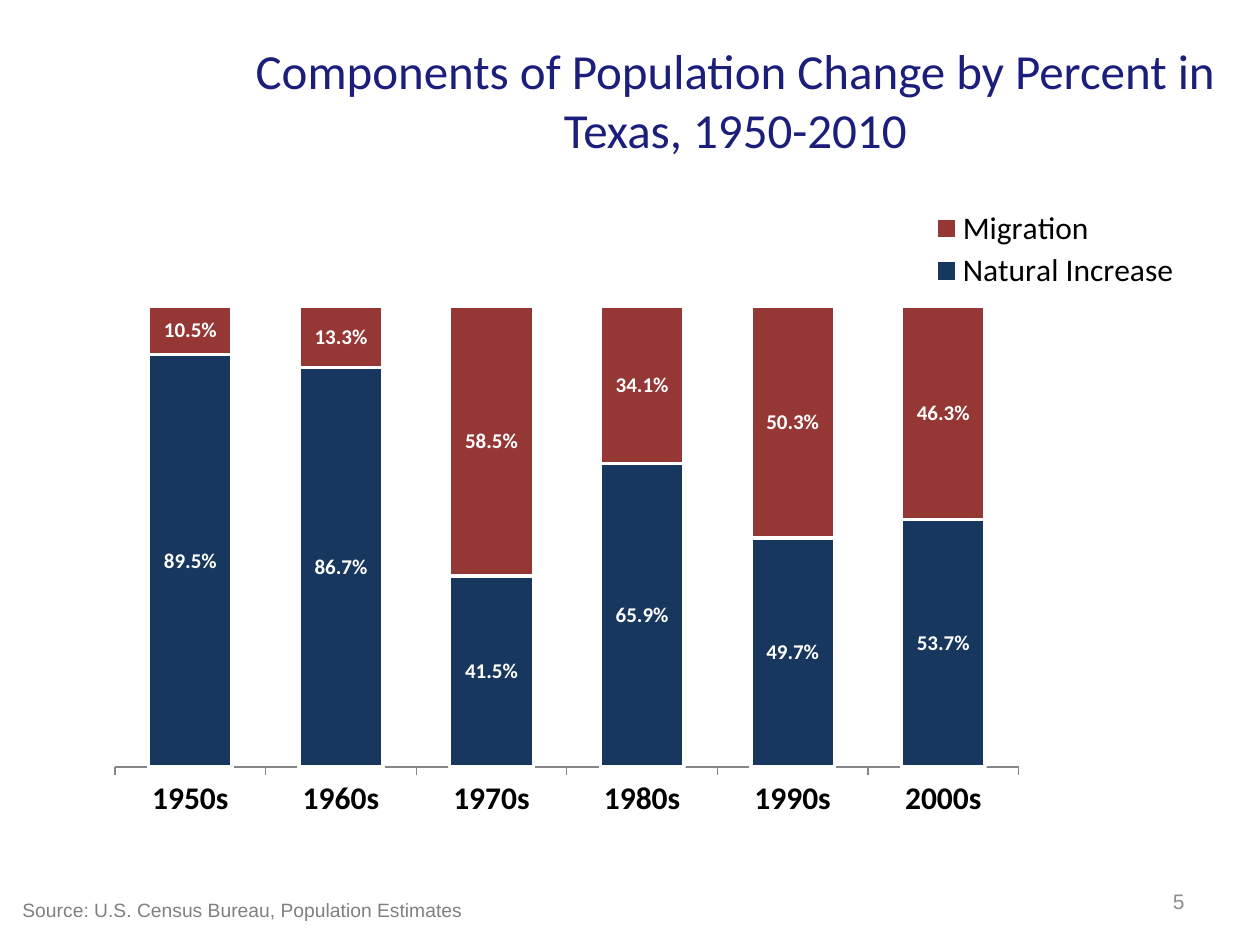
from dataclasses import dataclass

from lxml.etree import SubElement
from pptx import Presentation
from pptx.chart.data import CategoryChartData
from pptx.dml.color import RGBColor
from pptx.enum.chart import XL_CHART_TYPE, XL_LABEL_POSITION, XL_LEGEND_POSITION, XL_TICK_MARK
from pptx.enum.text import MSO_ANCHOR, PP_ALIGN
from pptx.oxml.ns import qn
from pptx.util import Pt


@dataclass(frozen=True)
class Theme:
    heading: str = "Calibri"
    body: str = "Arial"
    title: str = "1B1E7A"
    source: str = "808080"
    number: str = "8C8C8C"
    natural: str = "17375E"
    migration: str = "953735"
    axis: str = "868686"
    white: str = "FFFFFF"
    black: str = "000000"
    title_size: int = 28
    chart_size: int = 18
    label_size: int = 12
    source_size: int = 11
    number_size: int = 12


THEME = Theme()
DECADES = ["1950s", "1960s", "1970s", "1980s", "1990s", "2000s"]
SERIES = [
    ("Natural Increase", THEME.natural, [0.895, 0.867, 0.415, 0.659, 0.497, 0.537]),
    ("Migration", THEME.migration, [0.105, 0.133, 0.585, 0.341, 0.503, 0.463]),
]


def px(n):
    return n * 9144


def rgb(color):
    return RGBColor.from_string(color)


def set_font(font, name, size, color, bold=False):
    font.name = name
    font.size = Pt(size)
    font.bold = bold
    font.color.rgb = rgb(color)


def write(sp, text, name, size, color, align, anchor):
    tf = sp.text_frame
    tf.word_wrap = True
    tf.vertical_anchor = anchor
    p = tf.paragraphs[0]
    p.alignment = align
    r = p.add_run()
    r.text = text
    set_font(r.font, name, size, color)


def add_title(s, box):
    sp = s.shapes.title
    sp.left, sp.top, sp.width, sp.height = map(px, box)
    write(sp, "Components of Population Change by Percent in Texas, 1950-2010",
          THEME.heading, THEME.title_size, THEME.title, PP_ALIGN.CENTER, MSO_ANCHOR.MIDDLE)


def add_footer(s, box):
    x, y, w, h = box
    sp = s.shapes.add_textbox(px(x), px(y + 13), px(500), px(29))
    write(sp, "Source: U.S. Census Bureau, Population Estimates",
          THEME.body, THEME.source_size, THEME.source, PP_ALIGN.LEFT, MSO_ANCHOR.TOP)
    sp = s.shapes.add_textbox(px(x + w - 233), px(y), px(233), px(40))
    write(sp, "5", THEME.body, THEME.number_size, THEME.number,
          PP_ALIGN.RIGHT, MSO_ANCHOR.MIDDLE)


def set_layout(parent, x, y, w, h, inner=False):
    layout = parent.find(qn("c:layout"))
    if layout is None:
        layout = SubElement(parent, qn("c:layout"))
        parent.remove(layout)
        place = 1 if parent.tag == qn("c:legend") else 0
        parent.insert(place, layout)
    manual = SubElement(layout, qn("c:manualLayout"))
    values = [("layoutTarget", "inner")] if inner else []
    values += [("xMode", "edge"), ("yMode", "edge"), ("x", x), ("y", y), ("w", w), ("h", h)]
    for tag, value in values:
        SubElement(manual, qn(f"c:{tag}")).set("val", str(value))


def style_series(ser, color):
    ser.format.fill.solid()
    ser.format.fill.fore_color.rgb = rgb(color)
    ser.format.line.color.rgb = rgb(THEME.white)
    ser.format.line.width = Pt(2)
    labels = ser.data_labels
    labels.show_value = True
    labels.number_format = "0.0%"
    labels.number_format_is_linked = False
    labels.position = XL_LABEL_POSITION.CENTER
    set_font(labels.font, THEME.heading, THEME.label_size, THEME.white, True)


def add_population_chart(s, box):
    data = CategoryChartData(number_format="0.0%")
    data.categories = DECADES
    for name, color, values in SERIES:
        data.add_series(name, values)
    chart = s.shapes.add_chart(XL_CHART_TYPE.COLUMN_STACKED, *map(px, box), data).chart
    chart.has_title = False
    set_font(chart.font, THEME.heading, THEME.chart_size, THEME.black)

    plot = chart.plots[0]
    plot.gap_width = 80
    plot.overlap = 100
    plot.vary_by_categories = False
    for ser, (name, color, values) in zip(plot.series, SERIES):
        style_series(ser, color)

    value_axis = chart.value_axis
    value_axis.minimum_scale = 0
    value_axis.maximum_scale = 1
    value_axis.has_major_gridlines = False
    value_axis.visible = False
    cat_axis = chart.category_axis
    cat_axis.major_tick_mark = XL_TICK_MARK.OUTSIDE
    cat_axis.format.line.color.rgb = rgb(THEME.axis)
    set_font(cat_axis.tick_labels.font, THEME.heading, THEME.chart_size, THEME.black, True)

    chart.has_legend = True
    legend = chart.legend
    legend.position = XL_LEGEND_POSITION.RIGHT
    legend.include_in_layout = False
    set_font(legend.font, THEME.heading, THEME.chart_size, THEME.black)
    chart_xml = chart.element.find(qn("c:chart"))
    set_layout(chart_xml.find(qn("c:plotArea")), 0.02, 0.17, 0.74, 0.73, inner=True)
    set_layout(chart_xml.find(qn("c:legend")), 0.68, 0.01, 0.22, 0.14)


def main():
    prs = Presentation()
    prs.slide_width, prs.slide_height = px(1000), px(750)
    s = prs.slides.add_slide(prs.slide_layouts[5])
    add_population_chart(s, (72, 158, 969, 501))
    add_title(s, (192, 25, 783, 108))
    add_footer(s, (8, 695, 942, 42))
    prs.save("out.pptx")


if __name__ == "__main__":
    main()
